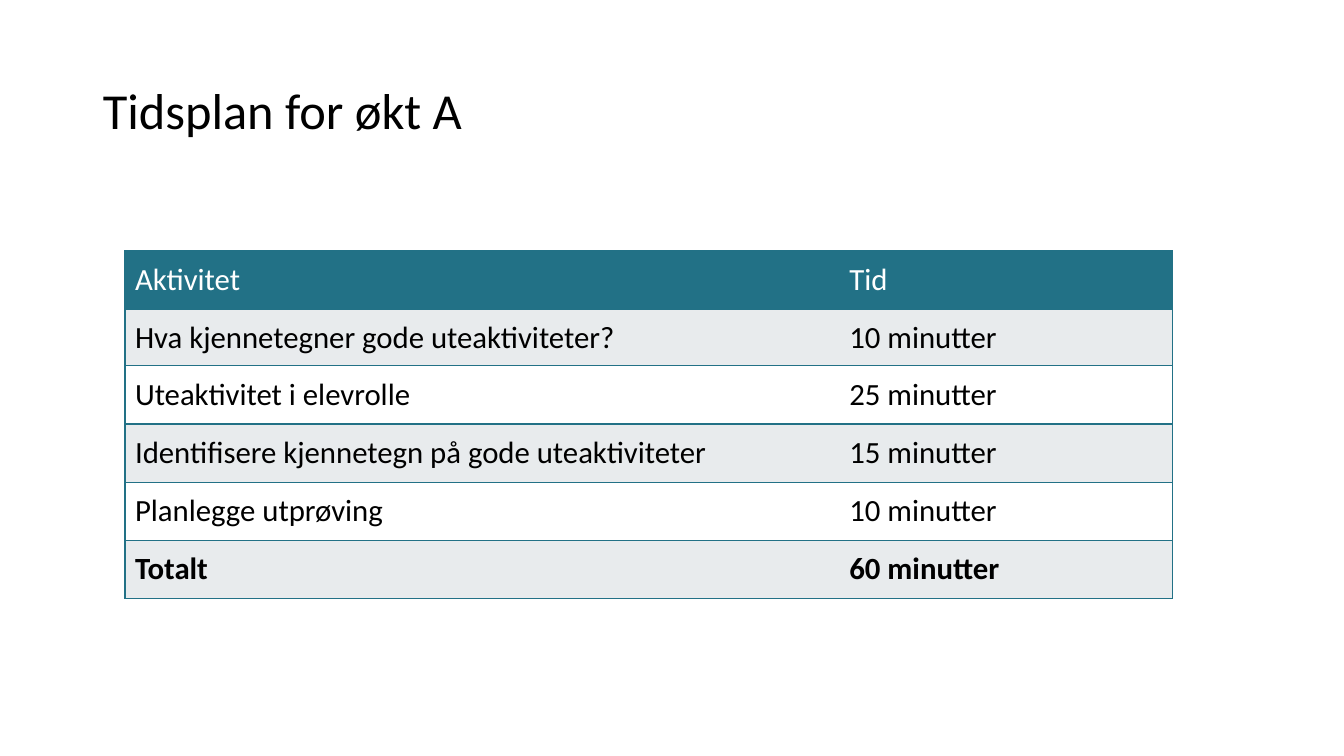
from pptx import Presentation
from pptx.dml.color import RGBColor
from pptx.enum.text import MSO_ANCHOR, PP_ALIGN
from pptx.oxml.xmlchemy import OxmlElement
from pptx.util import Inches, Pt

TEAL = RGBColor(0x22, 0x71, 0x86)
GREY = RGBColor(0xE8, 0xEB, 0xED)
WHITE = RGBColor(0xFF, 0xFF, 0xFF)
BLACK = RGBColor(0x00, 0x00, 0x00)

SCHEDULE = [
    ("Aktivitet", "Tid"),
    ("Hva kjennetegner gode uteaktiviteter?", "10 minutter"),
    ("Uteaktivitet i elevrolle", "25 minutter"),
    ("Identifisere kjennetegn på gode uteaktiviteter", "15 minutter"),
    ("Planlegge utprøving", "10 minutter"),
    ("Totalt", "60 minutter"),
]


def write(tf, text, size=22, color=BLACK, bold=False, spacing=1.0):
    p = tf.paragraphs[0]
    p.alignment = PP_ALIGN.LEFT
    p.line_spacing = spacing
    r = p.add_run()
    r.text = text
    r.font.name = "Calibri"
    r.font.size = Pt(size)
    r.font.bold = bold
    r.font.color.rgb = color


def set_borders(cell, sides, color, width=1):
    tcPr = cell._tc.get_or_add_tcPr()
    for i, side in enumerate("LRTB"):
        ln = OxmlElement(f"a:ln{side}")
        ln.set("w", str(Pt(width)))
        if side in sides:
            fill = OxmlElement("a:solidFill")
            clr = OxmlElement("a:srgbClr")
            clr.set("val", str(color))
            fill.append(clr)
        else:
            fill = OxmlElement("a:noFill")
        ln.append(fill)
        tcPr.insert(i, ln)


class Deck:
    """A title-only slide whose lengths are percentages of its size."""

    def __init__(self, prs):
        self.prs = prs
        self.s = prs.slides.add_slide(prs.slide_layouts[5])
        self.s.background.fill.solid()
        self.s.background.fill.fore_color.rgb = WHITE

    def x(self, share):
        return round(self.prs.slide_width * share / 100)

    def y(self, share):
        return round(self.prs.slide_height * share / 100)

    def title(self, text, left, top, width, height):
        sp = self.s.shapes.title
        sp.left, sp.top = self.x(left), self.y(top)
        sp.width, sp.height = self.x(width), self.y(height)
        sp.text_frame.vertical_anchor = MSO_ANCHOR.MIDDLE
        write(sp.text_frame, text, size=36, spacing=0.9)

    def table(self, rows, left, top, widths, heights):
        tbl = self.s.shapes.add_table(
            len(rows), len(widths), self.x(left), self.y(top),
            self.x(sum(widths)), self.y(sum(heights))).table
        for col, width in zip(tbl.columns, widths):
            col.width = self.x(width)
        for i, (row, height) in enumerate(zip(rows, heights)):
            tbl.rows[i].height = self.y(height)
            for j, text in enumerate(row):
                cell = tbl.cell(i, j)
                cell.vertical_anchor = MSO_ANCHOR.MIDDLE
                cell.fill.solid()
                cell.fill.fore_color.rgb = TEAL if i == 0 else GREY if i % 2 else WHITE
                set_borders(cell, "RTB" if j else "LTB", TEAL)
                write(cell.text_frame, text, color=BLACK if i else WHITE,
                      bold=i == len(rows) - 1)


def main():
    prs = Presentation()
    prs.slide_width, prs.slide_height = Inches(13.33), Inches(7.5)
    deck = Deck(prs)
    deck.title("Tidsplan for økt A", 6.9, 5.33, 86.25, 19.33)
    deck.table(SCHEDULE, 9.3, 33.2, widths=[53.15, 24.8],
               heights=[7.7, 7.5] + [7.7] * 4)
    prs.save("out.pptx")


if __name__ == "__main__":
    main()
